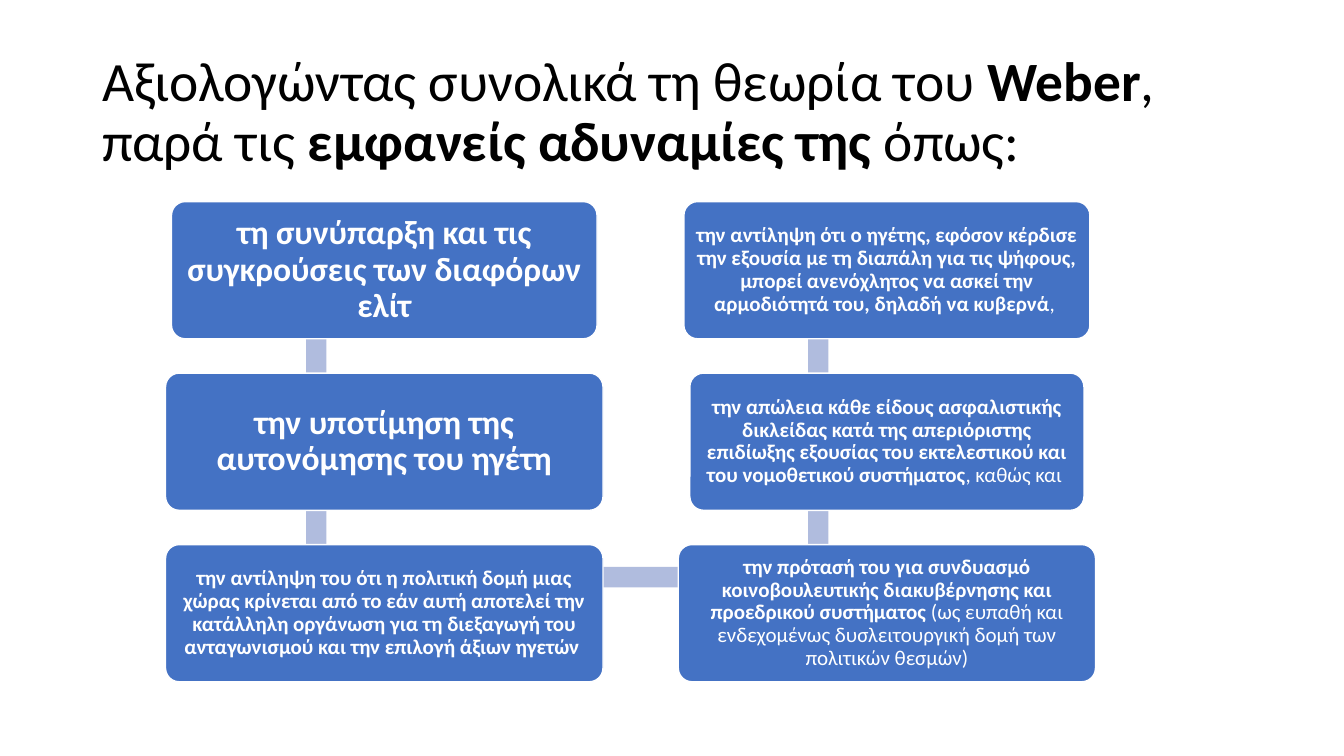
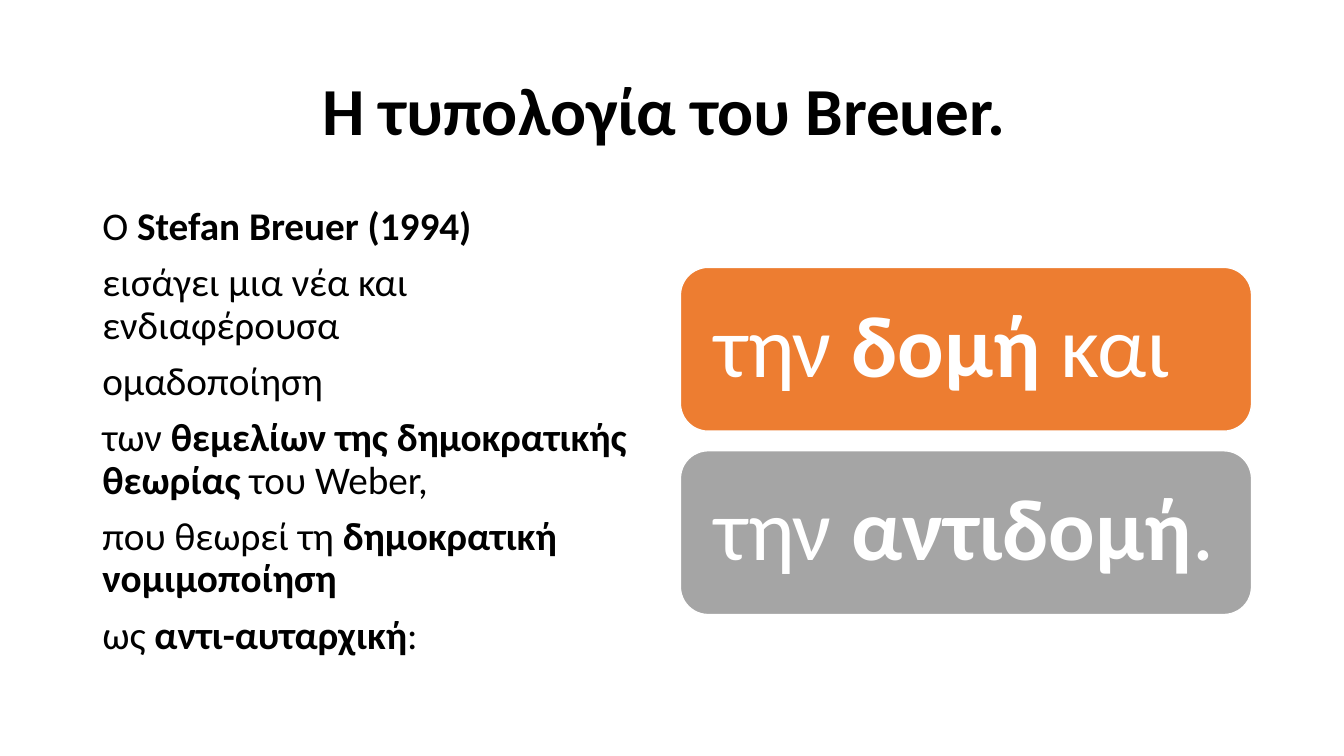
from dataclasses import dataclass

from pptx import Presentation
from pptx.dml.color import RGBColor as RGB
from pptx.enum.shapes import MSO_SHAPE as SHAPE
from pptx.enum.text import MSO_ANCHOR as ANCHOR, PP_ALIGN as ALIGN
from pptx.util import Pt


@dataclass(frozen=True)
class Theme:
    font: str = "Calibri"
    ink: str = "000000"
    white: str = "FFFFFF"
    blue: str = "4472C4"
    bar: str = "B0BCDE"
    orange: str = "ED7D31"
    grey: str = "A5A5A5"
    title: float = 39.6
    title_big: float = 48
    body: float = 28
    step_big: float = 24
    step: float = 15
    card: float = 62


T = Theme()

# Text between ** marks is bold.
WEAKNESS_TITLE = "Αξιολογώντας συνολικά τη θεωρία του **Weber**, παρά τις **εμφανείς αδυναμίες της** όπως:"
# Column centre, bar centre, then (width, size, text) from top to bottom
COLUMNS = [
    (274.5, 226, [
        (304, T.step_big, "**τη συνύπαρξη και τις συγκρούσεις των διαφόρων ελίτ**"),
        (312.5, T.step_big, "**την υποτίμηση της αυτονόμησης του ηγέτη**"),
        (312.5, T.step, "**την αντίληψη του ότι η πολιτική δομή μιας χώρας κρίνεται από το εάν αυτή "
                        "αποτελεί την κατάλληλη οργάνωση για τη διεξαγωγή του ανταγωνισμού και την "
                        "επιλογή άξιων ηγετών **"),
    ]),
    (633.5, 584.5, [
        (290, T.step, "**την αντίληψη ότι ο ηγέτης, εφόσον κέρδισε την εξουσία με τη διαπάλη για τις "
                      "ψήφους, μπορεί ανενόχλητος να ασκεί την αρμοδιότητά του, δηλαδή να κυβερνά**, "),
        (281.5, T.step, "**την απώλεια κάθε είδους ασφαλιστικής δικλείδας κατά της απεριόριστης "
                        "επιδίωξης εξουσίας του εκτελεστικού και του νομοθετικού συστήματος**, καθώς και "),
        (298, T.step, "**την πρότασή του για συνδυασμό κοινοβουλευτικής διακυβέρνησης και προεδρικού "
                      "συστήματος** (ως ευπαθή και ενδεχομένως δυσλειτουργική δομή των πολιτικών θεσμών)"),
    ]),
]

TYPOLOGY_TITLE = "**Η τυπολογία του Breuer. **"
TYPOLOGY_BODY = [
    "Ο **Stefan Breuer (1994)**",
    "εισάγει μια νέα και ενδιαφέρουσα",
    "ομαδοποίηση",
    "των **θεμελίων της δημοκρατικής θεωρίας **του Weber,",
    "που θεωρεί τη **δημοκρατική νομιμοποίηση**",
    "ως **αντι-αυταρχική**:",
]
CARDS = [(T.orange, "την **δομή** και"), (T.grey, "την **αντιδομή**.")]

TOP, MARGIN = 144, 66
STEP_H, STEP_PITCH, BAR_W = 98, 122.5, 14.5
CARD_X, CARD_Y, CARD_W, CARD_H, CARD_PITCH = 486, 191, 408, 117, 131


def write(sp, paragraphs, size, color, align=ALIGN.LEFT, anchor=ANCHOR.MIDDLE,
          inset=(7.2, 3.6), gap=0):
    tf = sp.text_frame
    across, down = map(Pt, inset)
    frame = dict(word_wrap=True, vertical_anchor=anchor, margin_left=across,
                 margin_right=across, margin_top=down, margin_bottom=down)
    for name, value in frame.items():
        setattr(tf, name, value)
    for i, text in enumerate(paragraphs):
        p = tf.add_paragraph() if i else tf.paragraphs[0]
        layout = dict(alignment=align, line_spacing=0.9, space_before=Pt(gap if i else 0))
        for name, value in layout.items():
            setattr(p, name, value)
        for j, part in enumerate(text.split("**")):
            if part:
                r = p.add_run()
                r.text = part
                for name, value in dict(name=T.font, size=Pt(size), bold=j % 2 == 1).items():
                    setattr(r.font, name, value)
                r.font.color.rgb = RGB.from_string(color)


def textbox(s, x, y, w, h, paragraphs, size, **style):
    write(s.shapes.add_textbox(*map(Pt, (x, y, w, h))), paragraphs, size, T.ink, **style)


def title(s, text, size, align=ALIGN.LEFT):
    textbox(s, MARGIN, 29, 828, 104, [text], size, align=align)


def block(s, kind, x, y, w, h, fill):
    sp = s.shapes.add_shape(kind, *map(Pt, (x, y, w, h)))
    sp.shadow.inherit = False
    sp.fill.solid()
    sp.fill.fore_color.rgb = RGB.from_string(fill)
    sp.line.fill.background()
    return sp


def rounded(s, x, y, w, h, fill, radius):
    sp = block(s, SHAPE.ROUNDED_RECTANGLE, x, y, w, h, fill)
    sp.adjustments[0] = radius
    sp.line.color.rgb = RGB.from_string(T.white)
    sp.line.width = Pt(1)
    return sp


def weaknesses(s):
    title(s, WEAKNESS_TITLE, T.title)
    last_y = TOP + 2 * STEP_PITCH
    bar_left, bar_right = (bar_x for _, bar_x, _ in COLUMNS)
    block(s, SHAPE.RECTANGLE, bar_left, last_y + 16, bar_right - bar_left, BAR_W, T.bar)
    for center, bar_x, steps in COLUMNS:
        for i in range(len(steps) - 1):
            block(s, SHAPE.RECTANGLE, bar_x - BAR_W / 2, TOP + i * STEP_PITCH + 24,
                  BAR_W, STEP_PITCH, T.bar)
        for i, (width, size, text) in enumerate(steps):
            sp = rounded(s, center - width / 2, TOP + i * STEP_PITCH, width, STEP_H, T.blue, 0.1)
            inset = 7.2 if size == T.step_big else 4.3
            write(sp, [text], size, T.white, align=ALIGN.CENTER, inset=(inset, inset))


def typology(s):
    title(s, TYPOLOGY_TITLE, T.title_big, ALIGN.CENTER)
    textbox(s, MARGIN, TOP, 400, 343, TYPOLOGY_BODY, T.body, anchor=ANCHOR.TOP, gap=10)
    for i, (fill, text) in enumerate(CARDS):
        sp = rounded(s, CARD_X, CARD_Y + i * CARD_PITCH, CARD_W, CARD_H, fill, 0.17)
        write(sp, [text], T.card, T.white, inset=(18.6, 18.6))


def main():
    prs = Presentation()
    prs.slide_width, prs.slide_height = Pt(960), Pt(540)
    for build in (weaknesses, typology):
        build(prs.slides.add_slide(prs.slide_layouts[6]))
    prs.save("out.pptx")


if __name__ == "__main__":
    main()
